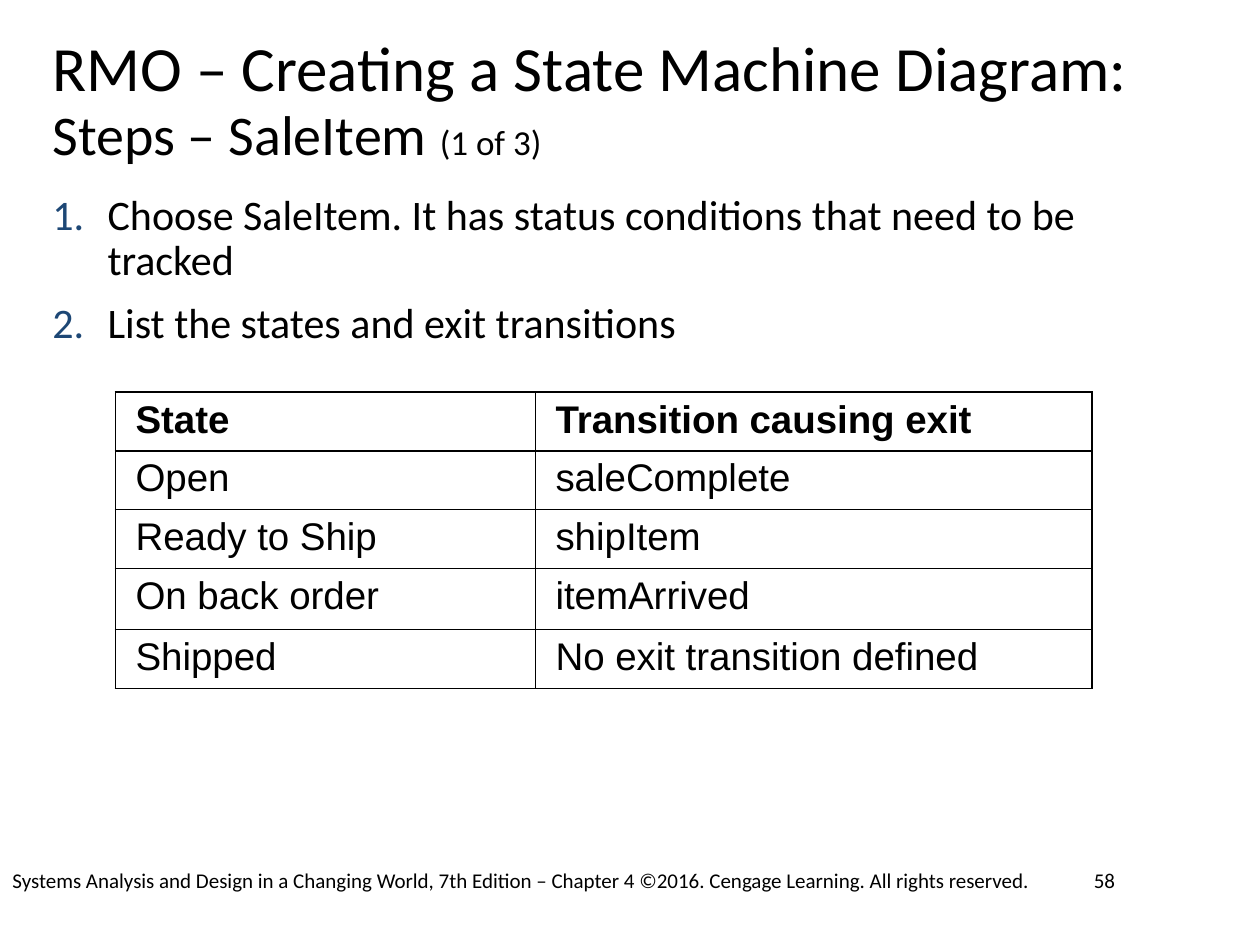
from lxml.etree import SubElement
from pptx import Presentation
from pptx.dml.color import RGBColor
from pptx.enum.text import MSO_ANCHOR, MSO_AUTO_SIZE, PP_ALIGN
from pptx.oxml.ns import qn
from pptx.util import Pt

BLACK = RGBColor(0x00, 0x00, 0x00)
NUMBER_BLUE = RGBColor(0x1D, 0x47, 0x75)


class SlideBuilder:
    """Holds the style and the current slide."""

    text_font = "Calibri"
    table_font = "Arial"
    line_spacing = 0.9

    def __init__(self, slide):
        self.slide = slide

    def add_run(self, paragraph, wording, size, font=None, bold=False):
        run = paragraph.add_run()
        run.text = wording
        run.font.name = font or self.text_font
        run.font.size = Pt(size)
        run.font.bold = bold
        run.font.color.rgb = BLACK

    def place(self, placeholder, left, top, width, height):
        placeholder.left, placeholder.top = Pt(left), Pt(top)
        placeholder.width, placeholder.height = Pt(width), Pt(height)
        frame = placeholder.text_frame
        frame.margin_left = frame.margin_right = 0
        frame.margin_top = frame.margin_bottom = 0
        frame.vertical_anchor = MSO_ANCHOR.TOP
        frame.word_wrap = True
        frame.auto_size = MSO_AUTO_SIZE.SHAPE_TO_FIT_TEXT
        return frame

    def title(self, pieces, *box):
        heading = self.place(self.slide.shapes.title, *box).paragraphs[0]
        heading.alignment = PP_ALIGN.LEFT
        heading.line_spacing = self.line_spacing
        for wording, size in pieces:
            self.add_run(heading, wording, size)

    def numbered_list(self, steps, size, indent, gap, *box):
        frame = self.place(self.slide.placeholders[1], *box)
        for index, wording in enumerate(steps):
            step = frame.add_paragraph() if index else frame.paragraphs[0]
            properties = step._p.get_or_add_pPr()
            properties.set("marL", str(Pt(indent)))
            properties.set("indent", str(-Pt(indent)))
            number_color = SubElement(properties, qn("a:buClr"))
            SubElement(number_color, qn("a:srgbClr"), val=str(NUMBER_BLUE))
            SubElement(properties, qn("a:buFont"), typeface=self.text_font)
            SubElement(properties, qn("a:buAutoNum"), type="arabicPeriod")
            step.line_spacing = self.line_spacing
            step.space_before = Pt(gap if index else 0)
            self.add_run(step, wording, size)

    def border(self, cell, width):
        properties = cell._tc.get_or_add_tcPr()
        for side in ("a:lnL", "a:lnR", "a:lnT", "a:lnB"):
            line = SubElement(properties, qn(side), w=str(Pt(width)))
            fill = SubElement(line, qn("a:solidFill"))
            SubElement(fill, qn("a:srgbClr"), val=str(BLACK))

    def table(self, rows, left, top, widths, heights, size):
        grid = self.slide.shapes.add_table(
            len(rows), len(widths), Pt(left), Pt(top),
            Pt(sum(widths)), Pt(sum(heights))).table
        grid.first_row = grid.horz_banding = False
        for column, width in zip(grid.columns, widths):
            column.width = Pt(width)
        for index, (row, height) in enumerate(zip(rows, heights)):
            grid.rows[index].height = Pt(height)
            for cell, wording in zip(grid.rows[index].cells, row):
                cell.margin_left = cell.margin_right = Pt(11.5)
                cell.margin_top = cell.margin_bottom = Pt(3.6)
                self.border(cell, 1)
                cell.fill.background()
                self.add_run(cell.text_frame.paragraphs[0], wording, size,
                             self.table_font, bold=index == 0)

    def label(self, wording, size, left, top, width, height):
        frame = self.slide.shapes.add_textbox(
            Pt(left), Pt(top), Pt(width), Pt(height)).text_frame
        frame.word_wrap = True
        self.add_run(frame.paragraphs[0], wording, size)


def main():
    deck = Presentation()
    deck.slide_width, deck.slide_height = Pt(720), Pt(540)
    builder = SlideBuilder(deck.slides.add_slide(deck.slide_layouts[1]))

    # Title and steps
    builder.title([("RMO – Creating a State Machine Diagram:", 36), (" ", 40),
                   ("Steps – SaleItem ", 32), ("(1 of 3)", 20)],
                  30, 18, 660, 74)
    builder.numbered_list(
        ["Choose SaleItem. It has status conditions that need to be tracked",
         "List the states and exit transitions"],
        24, 31.5, 10, 30, 111, 660, 88.5)

    # States and their exit transitions
    builder.table([("State", "Transition causing exit"),
                   ("Open", "saleComplete"),
                   ("Ready to Ship", "shipItem"),
                   ("On back order", "itemArrived"),
                   ("Shipped", "No exit transition defined")],
                  66, 224, (240, 318), (29.5, 29.5, 29.5, 35, 29.5), 22)

    # Slide number and copyright line
    builder.label("58", 12, 618, 492, 66, 36)
    builder.label("Systems Analysis and Design in a Changing World, 7th Edition "
                  "– Chapter 4 ©2016. Cengage Learning. All rights reserved.",
                  12, 0, 492, 600, 24)

    deck.save("out.pptx")


if __name__ == "__main__":
    main()
